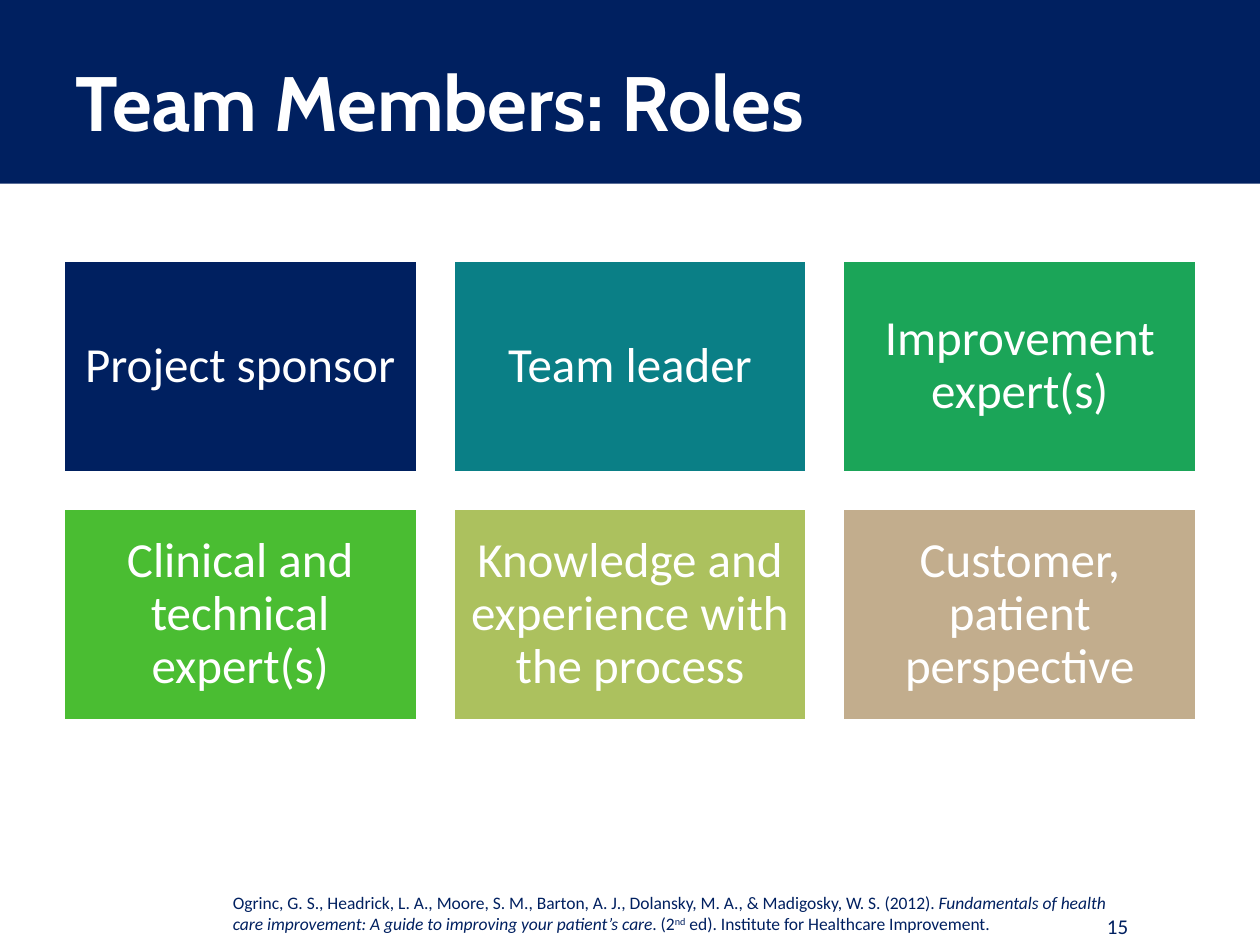
from dataclasses import dataclass

from pptx import Presentation
from pptx import util as u
from pptx.dml.color import RGBColor
from pptx.enum import shapes, text


@dataclass(frozen=True)
class Theme:
    navy: str = "002060"
    white: str = "FFFFFF"
    heading_font: str = "Cabin"
    body_font: str = "Calibri"
    title_size: float = 44
    card_size: float = 28
    number_size: float = 12
    citation_size: float = 10


THEME = Theme()

ROLES = [
    ("Project sponsor", THEME.navy),
    ("Team leader", "0A7F86"),
    ("Improvement expert(s)", "1BA558"),
    ("Clinical and technical expert(s)", "4ABD32"),
    ("Knowledge and experience with the process", "ACC15E"),
    ("Customer, patient perspective", "C2AD8D"),
]

# Each part of the citation with its style
CITATION = [
    ("Ogrinc, G. S., Headrick, L. A., Moore, S. M., Barton, A. J., Dolansky, M. A., "
     "& Madigosky, W. S. (2012). ", "plain"),
    ("Fundamentals of health care improvement: A guide to improving your patient’s care",
     "italic"),
    (". (2", "plain"),
    ("nd", "superscript"),
    (" ed). Institute for Healthcare Improvement.", "plain"),
]

# Card grid, in points
COLUMNS = 3
GRID_LEFT, GRID_TOP = 36, 148.5
CARD_WIDTH, CARD_HEIGHT, GAP = 202.5, 121.5, 20.25


def style_run(run, size, color, font=THEME.body_font, bold=False):
    run.font.name = font
    run.font.size = u.Pt(size)
    run.font.bold = bold
    run.font.color.rgb = RGBColor.from_string(color)


def add_rectangle(slide, left, top, width, height, fill, line=None):
    shape = slide.shapes.add_shape(
        shapes.MSO_SHAPE.RECTANGLE, u.Pt(left), u.Pt(top), u.Pt(width), u.Pt(height))
    shape.shadow.inherit = False
    shape.fill.solid()
    shape.fill.fore_color.rgb = RGBColor.from_string(fill)
    if line:
        shape.line.color.rgb = RGBColor.from_string(line)
        shape.line.width = u.Pt(2)
    else:
        shape.line.fill.background()
    return shape


def add_text_box(slide, left, top, width, height, anchor=text.MSO_ANCHOR.MIDDLE):
    box = slide.shapes.add_textbox(u.Pt(left), u.Pt(top), u.Pt(width), u.Pt(height))
    box.text_frame.word_wrap = True
    box.text_frame.vertical_anchor = anchor
    return box.text_frame


def add_title(slide, wording):
    frame = add_text_box(slide, 36, 12.24, 648, 90)
    frame.text = wording
    style_run(frame.paragraphs[0].runs[0], THEME.title_size, THEME.white,
              THEME.heading_font, bold=True)


def add_card(slide, index, wording, fill):
    row, column = divmod(index, COLUMNS)
    card = add_rectangle(
        slide, GRID_LEFT + column * (CARD_WIDTH + GAP), GRID_TOP + row * (CARD_HEIGHT + GAP),
        CARD_WIDTH, CARD_HEIGHT, fill, THEME.white)
    frame = card.text_frame
    frame.word_wrap = True
    frame.vertical_anchor = text.MSO_ANCHOR.MIDDLE
    frame.margin_left = frame.margin_right = u.Pt(8.4)
    frame.margin_top = frame.margin_bottom = u.Pt(8.4)
    frame.text = wording
    paragraph = frame.paragraphs[0]
    paragraph.alignment = text.PP_ALIGN.CENTER
    paragraph.line_spacing = 0.9
    style_run(paragraph.runs[0], THEME.card_size, THEME.white)


def add_citation(slide, parts):
    frame = add_text_box(slide, 126, 506.16, 516.24, 31.5, text.MSO_ANCHOR.TOP)
    paragraph = frame.paragraphs[0]
    for wording, style in parts:
        run = paragraph.add_run()
        run.text = wording
        style_run(run, THEME.citation_size, THEME.navy)
        run.font.italic = style == "italic"
        if style == "superscript":
            run._r.get_or_add_rPr().set("baseline", "30000")


def add_page_number(slide, number):
    frame = add_text_box(slide, 617.76, 518.4, 41.76, 21.6)
    frame.text = number
    paragraph = frame.paragraphs[0]
    paragraph.alignment = text.PP_ALIGN.CENTER
    style_run(paragraph.runs[0], THEME.number_size, THEME.navy)


def main():
    presentation = Presentation()
    presentation.slide_width = u.Pt(720)
    presentation.slide_height = u.Pt(540)
    slide = presentation.slides.add_slide(presentation.slide_layouts[6])

    # Header band and title
    add_rectangle(slide, 0, 0, 720, 105, THEME.navy)
    add_title(slide, "Team Members: Roles")

    # Role cards
    for index, (wording, fill) in enumerate(ROLES):
        add_card(slide, index, wording, fill)

    # Footer
    add_citation(slide, CITATION)
    add_page_number(slide, "15")

    presentation.save("out.pptx")


if __name__ == "__main__":
    main()
